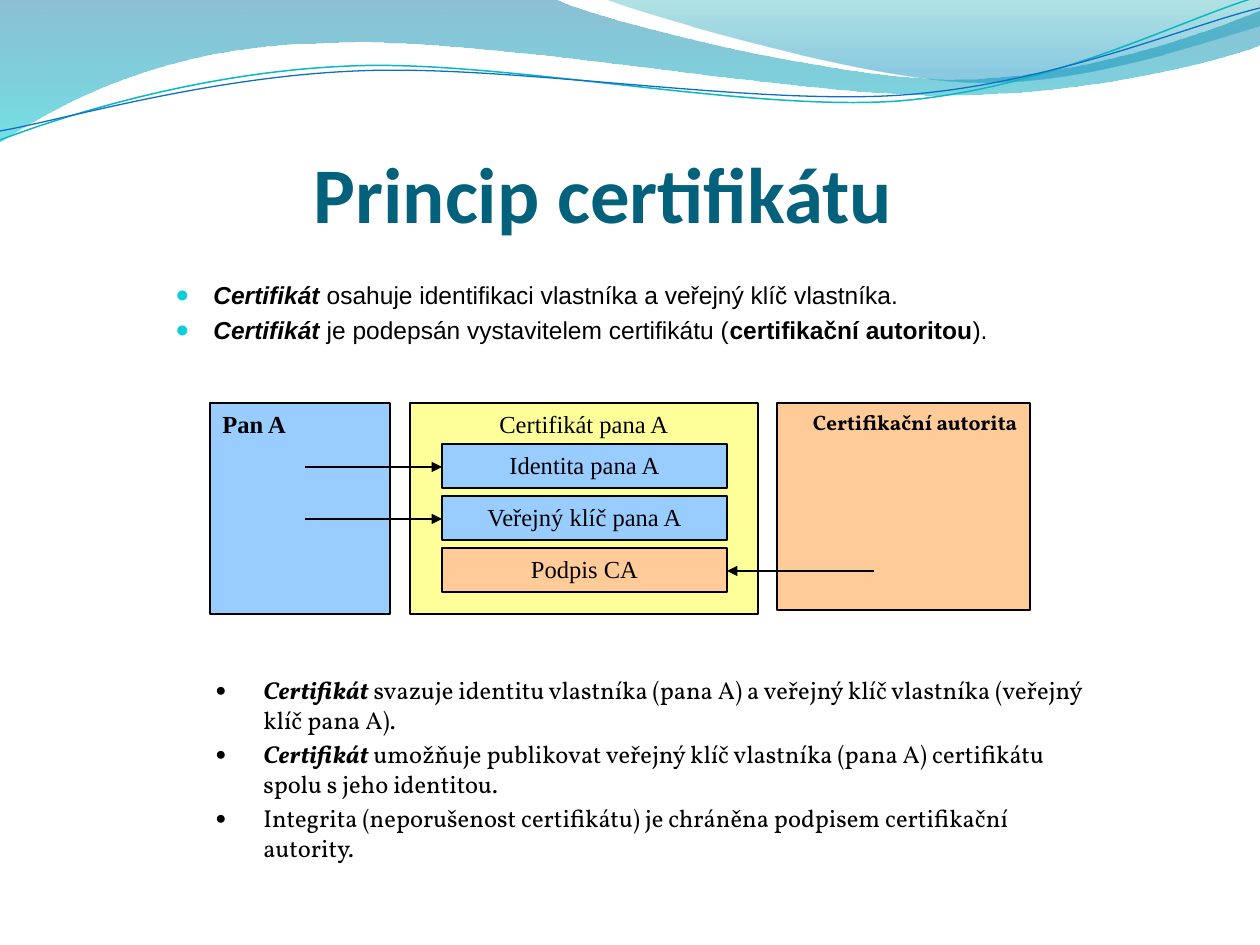
from lxml import etree
from pptx import Presentation
from pptx.dml.color import RGBColor
from pptx.enum.shapes import MSO_CONNECTOR, MSO_SHAPE
from pptx.enum.text import MSO_ANCHOR, PP_ALIGN
from pptx.oxml.ns import qn
from pptx.util import Pt

LEFT, CENTER, RIGHT, JUSTIFY = PP_ALIGN.LEFT, PP_ALIGN.CENTER, PP_ALIGN.RIGHT, PP_ALIGN.JUSTIFY
TOP, BOTTOM = MSO_ANCHOR.TOP, MSO_ANCHOR.BOTTOM
RECTANGLE, STRAIGHT = MSO_SHAPE.RECTANGLE, MSO_CONNECTOR.STRAIGHT
SCALE = 914400 / 126  # EMU per px

COLORS = {
    "title": "04617B", "black": "000000", "bullet": "0BD0D9",
    "blue": "99CCFF", "orange": "FFCC99", "yellow": "FFFF99",
    "teal line": "0AB8BF", "blue line": "0F6FC6",
}
SERIF, SANS, BOOK = "Times New Roman", "Arial", "Vollkorn"

# Wave outlines: a pair is a straight step, six numbers are a Bezier curve
# Gradient stops: position, colour, opacity in percent
FILLED_WAVES = [
    ([(0, 0), (554, -1), (600, 21, 837, 79, 955, 79), (1075, 79, 1207, 33, 1260, 11),
      (1261, 45), (1239, 55, 1096, 96, 940, 95), (784, 95, 481, 35, 324, 43),
      (163, 45, 58, 105, -1, 142)],
     [(0, "0074A1", 45), (1, "00C6CF", 55)]),
    ([(604, -1), (641, 14, 859, 78, 969, 82), (1079, 87, 1211, 40, 1260, 26), (1260, 0)],
     [(0, "00A1A9", 30), (0.8, "008BBF", 45)]),
]
LINE_WAVES = [
    ([(0, 140), (60, 117, 199, 72, 349, 66), (498, 59, 747, 112, 898, 101),
      (1050, 89, 1182, 19, 1257, -3)], "teal line", 0.85),
    ([(0, 131), (59, 121, 207, 77, 357, 71), (508, 64, 752, 106, 903, 95),
      (1053, 84, 1186, 26, 1260, 8)], "blue line", 0.75),
]

TITLE = "Princip certifikátu"
# Runs: text, style ("b" bold, "i" italic)
DEFINITION = [
    [("Certifikát", "bi"), (" osahuje identifikaci vlastníka a veřejný klíč vlastníka.", "")],
    [("Certifikát ", "bi"), ("je podepsán vystavitelem certifikátu (", ""),
     ("certifikační autoritou", "b"), (").", "")],
]
PURPOSE = [
    [("Certifikát", "bi"), (" svazuje identitu vlastníka (pana A) a veřejný klíč vlastníka "
                            "(veřejný klíč pana A).", "")],
    [("Certifikát", "bi"), (" umožňuje publikovat veřejný klíč vlastníka (pana A) certifikátu "
                            "spolu s jeho identitou.", "")],
    [("Integrita (neporušenost certifikátu) je chráněna podpisem certifikační autority.", "")],
]
# Text, style, left, top, width, height, fill, alignment, font, size
PARTIES = [
    ("Pan A", "b", 210, 403, 180, 211, "blue", LEFT, SERIF, 14),
    ("Certifikační autorita", "b", 777, 403, 253, 207, "orange", RIGHT, BOOK, 12),
    ("Certifikát pana A", "", 410, 403, 348, 211, "yellow", CENTER, SERIF, 14),
]
# Text, fill, x where the arrow starts
FIELDS = [
    ("Identita pana A", "blue", 305),
    ("Veřejný klíč pana A", "blue", 305),
    ("Podpis CA", "orange", 874),
]
FIELD_LEFT, FIELD_TOP, FIELD_WIDTH, FIELD_HEIGHT, FIELD_PITCH = 442, 444, 285, 44, 52


def px(*values):
    return [round(value * SCALE) for value in values]


def rgb(name):
    return RGBColor.from_string(COLORS[name])


def add_wave(page, steps, close):
    points = [step[i:i + 2] for step in steps for i in range(0, len(step), 2)]
    builder = page.shapes.build_freeform(*points[0], scale=SCALE)
    builder.add_line_segments(points[1:], close=close)
    wave = builder.convert_to_shape()
    wave.shadow.inherit = False
    # Join each three straight segments of a curve into one Bezier segment
    segments = iter(list(wave._element.iter(qn("a:lnTo"))))
    for step in steps[1:]:
        parts = [next(segments) for _ in range(len(step) // 2)]
        if len(parts) == 3:
            curve = etree.Element(qn("a:cubicBezTo"))
            parts[0].addprevious(curve)
            for part in parts:
                curve.append(part[0])
                part.getparent().remove(part)
    return wave


def write(shape, paragraphs, font, size, align, color="black", anchor=TOP):
    frame = shape.text_frame
    frame.word_wrap = True
    frame.vertical_anchor = anchor
    for i, runs in enumerate(paragraphs):
        para = frame.paragraphs[0] if i == 0 else frame.add_paragraph()
        para.alignment = align
        para.font.name, para.font.size = font, Pt(size)
        para.font.color.rgb = rgb(color)
        if i:
            para.space_before = Pt(3)
        for text, style in runs:
            span = para.add_run()
            span.text = text
            span.font.bold, span.font.italic = "b" in style, "i" in style


def add_bullets(box, indent, color, percent):
    for para in box.text_frame.paragraphs:
        props = para._p.get_or_add_pPr()
        props.set("marL", str(px(indent)[0]))
        props.set("indent", str(px(-indent)[0]))
        tint = etree.Element(qn("a:buClr"))
        etree.SubElement(tint, qn("a:srgbClr")).set("val", COLORS[color])
        size = etree.Element(qn("a:buSzPct"), val=str(percent * 1000))
        font = etree.Element(qn("a:buFont"), typeface=SANS)
        mark = etree.Element(qn("a:buChar"), char="●")
        defaults = props.find(qn("a:defRPr"))
        for part in (tint, size, font, mark):
            defaults.addprevious(part)


def add_box(page, text, style, left, top, width, height, fill, align, font, size):
    box = page.shapes.add_shape(RECTANGLE, *px(left, top, width, height))
    box.shadow.inherit = False
    box.fill.solid()
    box.fill.fore_color.rgb = rgb(fill)
    box.line.color.rgb = rgb("black")
    box.line.width = Pt(0.75)
    write(box, [[(text, style)]], font, size, align)


def add_arrow(page, start, end, y):
    arrow = page.shapes.add_connector(STRAIGHT, *px(start, y, end, y))
    arrow.line.color.rgb = rgb("black")
    arrow.line.width = Pt(0.75)
    outline = arrow._element.spPr.find(qn("a:ln"))
    etree.SubElement(outline, qn("a:tailEnd")).set("type", "triangle")
    etree.SubElement(arrow._element.spPr, qn("a:effectLst"))


def main():
    deck = Presentation()
    deck.slide_width, deck.slide_height = px(1260, 945)
    page = deck.slides.add_slide(deck.slide_layouts[6])

    # Waves along the top
    for steps, stops in FILLED_WAVES:
        wave = add_wave(page, steps, close=True)
        wave.line.fill.background()
        wave.fill.gradient()
        wave.fill.gradient_angle = 270
        for stop, (position, color, _) in zip(wave.fill.gradient_stops, stops):
            stop.position = position
            stop.color.rgb = RGBColor.from_string(color)
        for tint, (_, _, opacity) in zip(wave._element.spPr.iter(qn("a:srgbClr")), stops):
            etree.SubElement(tint, qn("a:alpha")).set("val", str(opacity * 1000))
    for steps, color, width in LINE_WAVES:
        wave = add_wave(page, steps, close=False)
        wave.fill.background()
        wave.line.color.rgb = rgb(color)
        wave.line.width = Pt(width)

    # Title and the two lists
    title = page.shapes.add_textbox(*px(99, 87, 1008, 158))
    write(title, [[(TITLE, "b")]], "Calibri", 45, CENTER, "title", BOTTOM)
    definition = page.shapes.add_textbox(*px(163, 274, 892, 96))
    write(definition, DEFINITION, SANS, 14, JUSTIFY)
    add_bullets(definition, 38, "bullet", 95)
    purpose = page.shapes.add_textbox(*px(203, 669, 896, 276))
    write(purpose, PURPOSE, BOOK, 14, LEFT)
    add_bullets(purpose, 48, "black", 75)

    # Diagram: parties, then certificate fields with their arrows
    for party in PARTIES:
        add_box(page, *party)
    for i, (text, fill, start) in enumerate(FIELDS):
        top = FIELD_TOP + i * FIELD_PITCH
        add_box(page, text, "", FIELD_LEFT, top, FIELD_WIDTH, FIELD_HEIGHT,
                fill, CENTER, SERIF, 14)
        end = FIELD_LEFT if start < FIELD_LEFT else FIELD_LEFT + FIELD_WIDTH
        add_arrow(page, start, end, top + FIELD_HEIGHT / 2 + 1)

    deck.save("out.pptx")


if __name__ == "__main__":
    main()
